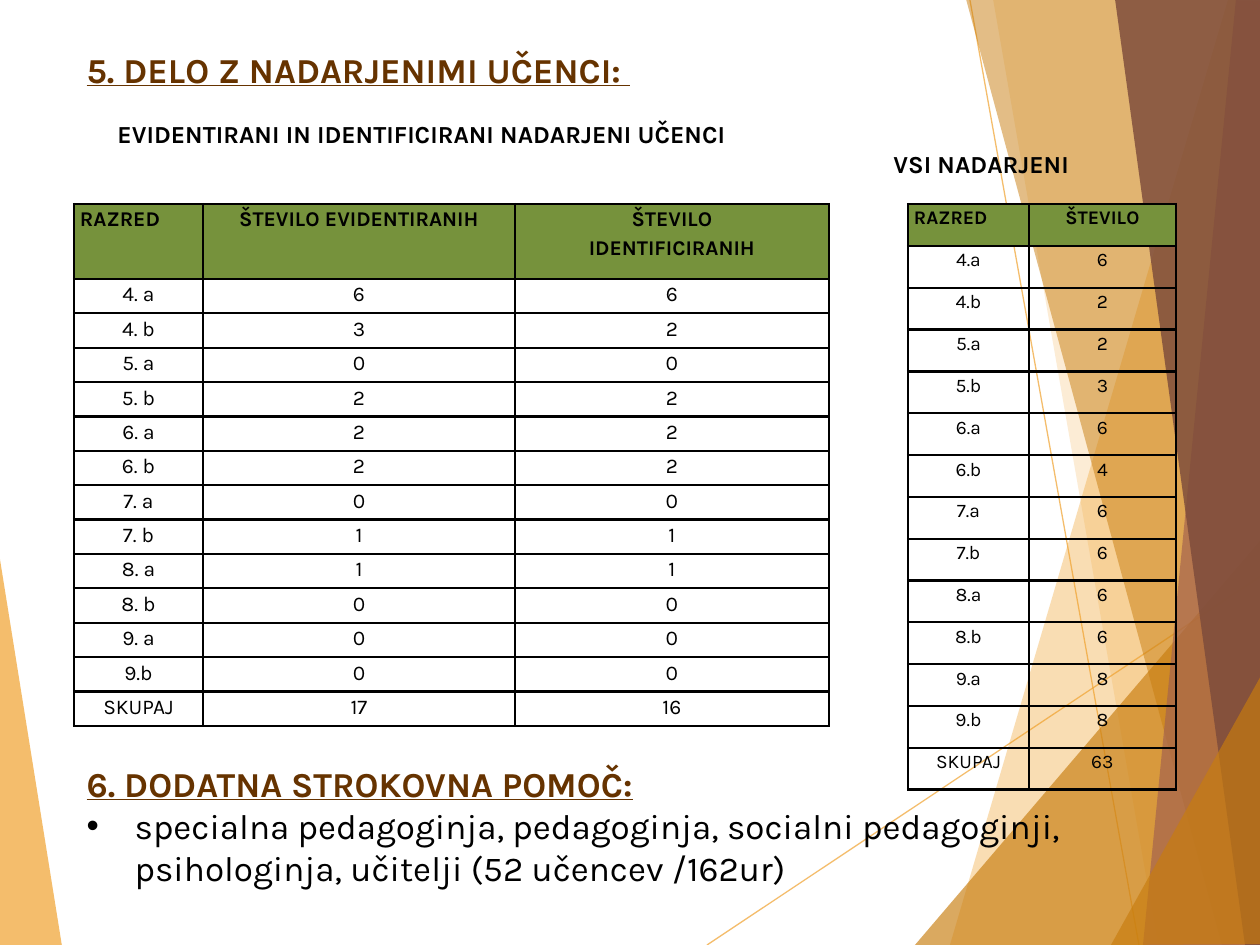
import dataclasses

import lxml.etree
import pptx
import pptx.dml.color
import pptx.enum.shapes
import pptx.enum.text
import pptx.oxml.ns
import pptx.util

PX = 914400 / 126  # EMU per pixel
qn = pptx.oxml.ns.qn
ALIGN = pptx.enum.text.PP_ALIGN
ANCHOR = pptx.enum.text.MSO_ANCHOR


def px(length):
    return pptx.util.Emu(round(length * PX))


def rgb(color):
    return pptx.dml.color.RGBColor.from_string(color)


@dataclasses.dataclass(frozen=True)
class Theme:
    font: str = "Karla"
    text: str = "000000"
    heading: str = "663300"
    header_fill: str = "76923C"
    orange: str = "F0A22E"
    ochre: str = "C87D0E"
    copper: str = "A5644E"
    brown: str = "7C4B3B"
    heading_pt: int = 20
    caption_pt: int = 14
    table_pt: int = 12
    side_table_pt: int = 11
    border_pt: float = 1.5
    ray_pt: float = 0.75


class SlideBuilder:
    def __init__(self, slide, theme):
        self.slide = slide
        self.theme = theme

    def style(self, paragraph, size, color, bold=False, underline=False):
        font = paragraph.font
        font.name = self.theme.font
        font.size = pptx.util.Pt(size)
        font.bold = bold
        font.underline = underline
        font.color.rgb = rgb(color)

    def set_alpha(self, shape, percent):
        color = shape.element.find(qn("p:spPr")).find(".//" + qn("a:srgbClr"))
        lxml.etree.SubElement(color, qn("a:alpha"), val=str(percent * 1000))

    def facet(self, points, color, alpha):
        builder = self.slide.shapes.build_freeform(*points[0], scale=PX)
        builder.add_line_segments(points[1:], close=True)
        shape = builder.convert_to_shape()
        shape.shadow.inherit = False
        shape.line.fill.background()
        shape.fill.solid()
        shape.fill.fore_color.rgb = rgb(color)
        self.set_alpha(shape, alpha)

    def ray(self, x1, y1, x2, y2, alpha):
        line = self.slide.shapes.add_connector(
            pptx.enum.shapes.MSO_CONNECTOR.STRAIGHT, px(x1), px(y1), px(x2), px(y2))
        line.line.color.rgb = rgb(self.theme.orange)
        line.line.width = pptx.util.Pt(self.theme.ray_pt)
        self.set_alpha(line, alpha)
        lxml.etree.SubElement(line.element.find(qn("p:spPr")), qn("a:effectLst"))

    def placeholder(self, holder, left, top, width, height, lines):
        """Fill a placeholder with (text, is_bullet) lines and bring it to the front."""
        self.slide.shapes.element.append(holder.element)
        holder.left, holder.top = px(left), px(top)
        holder.width, holder.height = px(width), px(height)
        frame = holder.text_frame
        frame.word_wrap = True
        frame.auto_size = pptx.enum.text.MSO_AUTO_SIZE.NONE
        frame.vertical_anchor = ANCHOR.TOP
        frame.text = "\n".join(text for text, _ in lines)
        for paragraph, (_, is_bullet) in zip(frame.paragraphs, lines):
            paragraph.alignment = ALIGN.LEFT
            paragraph.space_before = pptx.util.Pt(0)
            self.bullet(paragraph, 48 if is_bullet else 0)
            color = self.theme.text if is_bullet else self.theme.heading
            self.style(paragraph, self.theme.heading_pt, color,
                       bold=not is_bullet, underline=not is_bullet)

    def bullet(self, paragraph, indent):
        properties = paragraph._p.get_or_add_pPr()
        properties.set("marL", str(px(indent)))
        properties.set("indent", str(-px(indent)))
        if indent:
            lxml.etree.SubElement(properties, qn("a:buFont"), typeface="Arial")
            lxml.etree.SubElement(properties, qn("a:buChar"), char="•")
        else:
            lxml.etree.SubElement(properties, qn("a:buNone"))

    def caption(self, left, top, width, height, text):
        frame = self.slide.shapes.add_textbox(
            px(left), px(top), px(width), px(height)).text_frame
        frame.word_wrap = True
        frame.text = text
        self.style(frame.paragraphs[0], self.theme.caption_pt, self.theme.text, bold=True)

    def table(self, left, top, widths, header_height, body_height, rows, size):
        table = self.slide.shapes.add_table(
            len(rows), len(widths), px(left), px(top),
            px(sum(widths)), px(header_height + body_height)).table
        table.first_row = table.horz_banding = False
        for column, width in zip(table.columns, widths):
            column.width = px(width)
        for r, values in enumerate(rows):
            table.rows[r].height = px(body_height / (len(rows) - 1) if r else header_height)
            for c, value in enumerate(values):
                self.cell(table.cell(r, c), value, size, r == 0, r == 0 and c == 0)

    def cell(self, cell, value, size, is_header, is_left):
        cell.margin_left = cell.margin_right = px(6)
        cell.margin_top = cell.margin_bottom = 0
        properties = cell._tc.get_or_add_tcPr()
        for side in ("lnL", "lnR", "lnT", "lnB"):
            border = lxml.etree.SubElement(
                properties, qn("a:" + side), w=str(pptx.util.Pt(self.theme.border_pt)))
            fill = lxml.etree.SubElement(border, qn("a:solidFill"))
            lxml.etree.SubElement(fill, qn("a:srgbClr"), val=self.theme.text)
        if is_header:
            cell.fill.solid()
            cell.fill.fore_color.rgb = rgb(self.theme.header_fill)
        else:
            cell.fill.background()
        cell.text = str(value)
        for paragraph in cell.text_frame.paragraphs:
            paragraph.alignment = ALIGN.LEFT if is_left else ALIGN.CENTER
            paragraph.line_spacing = 1.15
            self.style(paragraph, size, self.theme.text, bold=is_header)


def main():
    deck = pptx.Presentation()
    deck.slide_width, deck.slide_height = px(1260), px(945)
    slide = deck.slides.add_slide(deck.slide_layouts[1])
    theme = Theme()
    page = SlideBuilder(slide, theme)

    # Faceted background
    page.facet([(-1, 553), (62, 946), (-1, 945)], theme.orange, 70)
    page.ray(707, 945, 1261, 576, 70)
    page.ray(970, 0, 1139, 945, 70)
    right_facets = [
        ([(1228, 0), (950, 945), (1262, 946), (1261, 1)], theme.orange, 36),
        ([(993, -1), (1158, 945), (1261, 945), (1261, -1)], theme.orange, 20),
        ([(915, 945), (1260, 541), (1261, 945)], theme.ochre, 66),
        ([(966, -1), (1222, 945), (1261, 944), (1261, -1)], theme.ochre, 50),
        ([(1236, -1), (1143, 945), (1261, 945), (1260, -1)], theme.copper, 70),
        ([(1115, -1), (1245, 945), (1262, 945), (1260, -1)], theme.brown, 82),
        ([(1111, 945), (1262, 674), (1262, 944)], theme.ochre, 66),
    ]
    for points, color, alpha in right_facets:
        page.facet(points, color, alpha)

    # Section headings and support staff
    page.placeholder(slide.shapes.title, 74, 42, 1142, 54,
                     [("5. DELO Z NADARJENIMI UČENCI: ", False)])
    page.placeholder(slide.placeholders[1], 74, 756, 1142, 138, [
        ("6. DODATNA STROKOVNA POMOČ:", False),
        ("specialna pedagoginja, pedagoginja, socialni pedagoginji, "
         "psihologinja, učitelji (52 učencev /162ur)", True),
    ])

    # Table captions
    page.caption(105, 113, 700, 42, "EVIDENTIRANI IN IDENTIFICIRANI NADARJENI UČENCI")
    page.caption(881, 143, 230, 42, "VSI NADARJENI")

    # Recorded and identified pupils by class
    identified = [
        ("RAZRED", "ŠTEVILO EVIDENTIRANIH", "ŠTEVILO\nIDENTIFICIRANIH"),
        ("4. a", 6, 6), ("4. b", 3, 2), ("5. a", 0, 0), ("5. b", 2, 2),
        ("6. a", 2, 2), ("6. b", 2, 2), ("7. a", 0, 0), ("7. b", 1, 1),
        ("8. a", 1, 1), ("8. b", 0, 0), ("9. a", 0, 0), ("9.b", 0, 0),
        ("SKUPAJ", 17, 16),
    ]
    page.table(74, 204, (129, 312, 314), 75, 447, identified, theme.table_pt)

    # All gifted pupils by class
    all_gifted = [
        ("RAZRED", "ŠTEVILO"),
        ("4.a", 6), ("4.b", 2), ("5.a", 2), ("5.b", 3), ("6.a", 6), ("6.b", 4),
        ("7.a", 6), ("7.b", 6), ("8.a", 6), ("8.b", 6), ("9.a", 8), ("9.b", 8),
        ("SKUPAJ", 63),
    ]
    page.table(908, 204, (121, 147), 42, 544, all_gifted, theme.side_table_pt)

    deck.save("out.pptx")


if __name__ == "__main__":
    main()
